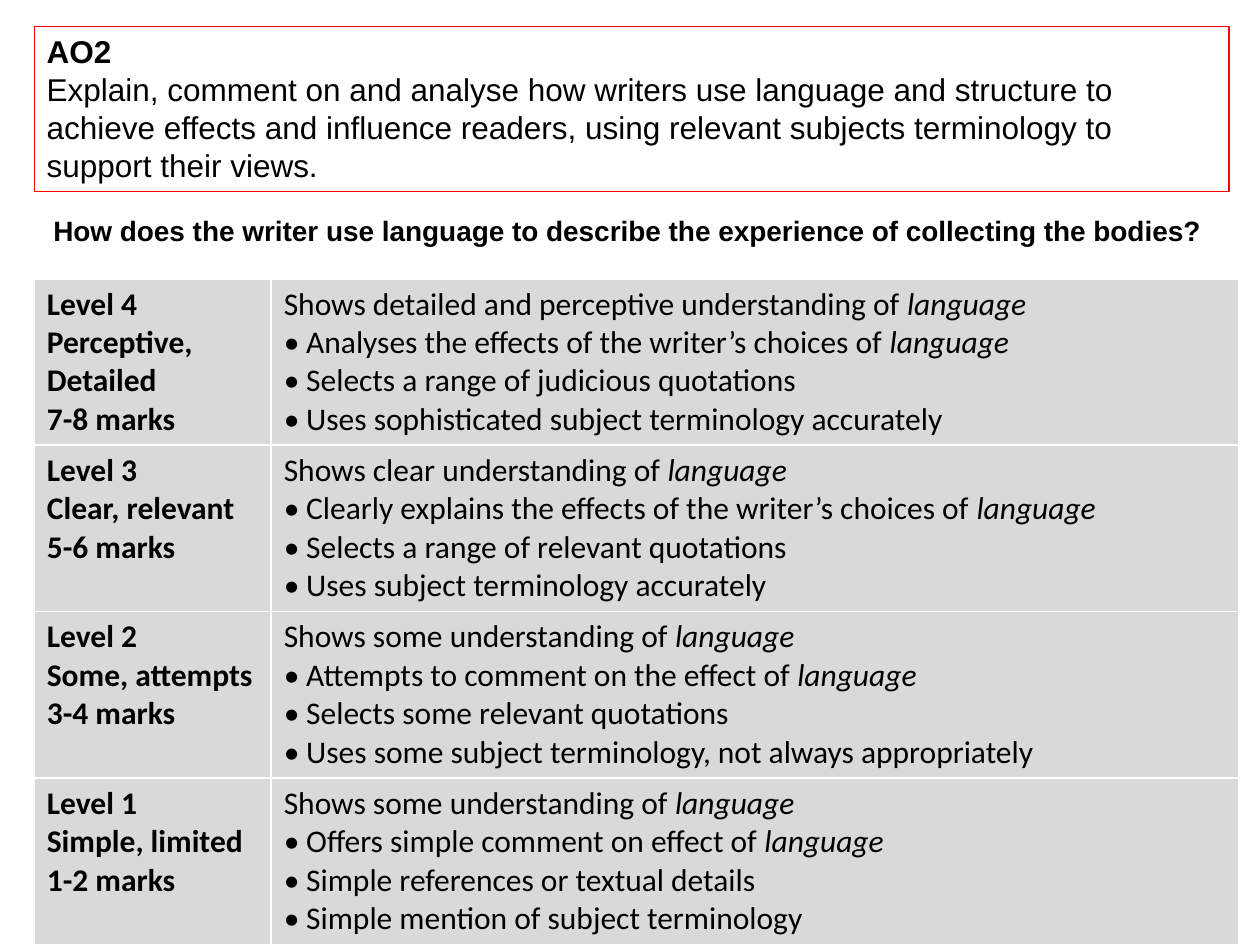
from lxml.etree import SubElement
from pptx import Presentation
from pptx.dml.color import RGBColor
from pptx.enum.shapes import MSO_SHAPE as Shape
from pptx.enum.text import MSO_ANCHOR as Anchor, MSO_AUTO_SIZE as AutoSize, PP_ALIGN as Align
from pptx.oxml.ns import qn
from pptx.util import Pt

COLORS = {"text": "000000", "outline": "FF0000", "cell": "D9D9D9", "border": "FFFFFF"}
FRAME = {"word_wrap": True, "auto_size": AutoSize.NONE, "vertical_anchor": Anchor.TOP,
         "margin_left": Pt(7.2), "margin_right": Pt(7.2),
         "margin_top": Pt(3.6), "margin_bottom": Pt(3.6)}
OBJECTIVE_FONT = {"name": "Arial", "size": Pt(18)}
QUESTION_FONT = {"name": "Arial", "size": Pt(16), "bold": True}
TABLE_FONT = {"name": "Calibri", "size": Pt(18), "bold": False}
BULLET_INDENT = Pt(12.8)
KEYWORD = "language"

OBJECTIVE = ("Explain, comment on and analyse how writers use language and structure to "
             "achieve effects and influence readers, using relevant subjects terminology "
             "to support their views.")
QUESTION = "How does the writer use language to describe the experience of collecting the bodies?"
LEVELS = [
    (["Level 4", "Perceptive, Detailed", "7-8 marks"],
     ["Shows detailed and perceptive understanding of language",
      "Analyses the effects of the writer’s choices of language",
      "Selects a range of judicious quotations",
      "Uses sophisticated subject terminology accurately"]),
    (["Level 3", "Clear, relevant", "5-6 marks"],
     ["Shows clear understanding of language",
      "Clearly explains the effects of the writer’s choices of language",
      "Selects a range of relevant quotations",
      "Uses subject terminology accurately"]),
    (["Level 2", "Some, attempts", "3-4 marks"],
     ["Shows some understanding of language",
      "Attempts to comment on the effect of language",
      "Selects some relevant quotations",
      "Uses some subject terminology, not always appropriately"]),
    (["Level 1", "Simple, limited", "1-2 marks"],
     ["Shows some understanding of language",
      "Offers simple comment on effect of language",
      "Simple references or textual details",
      "Simple mention of subject terminology"]),
]


def color(name):
    """Return the named colour."""
    return RGBColor.from_string(COLORS[name])


def apply_format(target, values):
    """Set each attribute in values on the target."""
    for name, value in values.items():
        setattr(target, name, value)


def add_run(paragraph, text, font, **extra):
    """Append a formatted run to the paragraph."""
    run = paragraph.add_run()
    run.text = text
    apply_format(run.font, {**font, **extra})
    run.font.color.rgb = color("text")


def next_paragraph(text_frame, index):
    """Return the first paragraph for index 0, otherwise a new one."""
    return text_frame.add_paragraph() if index else text_frame.paragraphs[0]


def add_bullet(paragraph):
    """Give the paragraph a hanging round bullet."""
    properties = paragraph._p.get_or_add_pPr()
    properties.set("marL", str(BULLET_INDENT))
    properties.set("indent", str(-BULLET_INDENT))
    SubElement(properties, qn("a:buFont"), typeface="Calibri")
    SubElement(properties, qn("a:buChar"), char="•")


def add_borders(cell):
    """Draw a thin line on all four sides of the cell."""
    properties = cell._tc.get_or_add_tcPr()
    for side in ("lnL", "lnR", "lnT", "lnB"):
        line = SubElement(properties, qn(f"a:{side}"), w=str(Pt(1)))
        fill = SubElement(line, qn("a:solidFill"))
        SubElement(fill, qn("a:srgbClr"), val=COLORS["border"])


def add_objective(slide, box):
    """Place the outlined assessment objective."""
    shape = slide.shapes.add_shape(Shape.RECTANGLE, *box)
    shape.shadow.inherit = False
    shape.fill.background()
    shape.line.color.rgb = color("outline")
    shape.line.width = Pt(0.75)
    apply_format(shape.text_frame, FRAME)
    for index, (text, bold) in enumerate([("AO2", True), (OBJECTIVE, False)]):
        paragraph = next_paragraph(shape.text_frame, index)
        paragraph.alignment = Align.LEFT
        add_run(paragraph, text, OBJECTIVE_FONT, bold=bold)


def add_question(slide, box):
    """Place the exam question in the title placeholder."""
    title = slide.shapes.title
    apply_format(title, dict(zip(("left", "top", "width", "height"), box)))
    apply_format(title.text_frame, FRAME)
    paragraph = title.text_frame.paragraphs[0]
    apply_format(paragraph, {"alignment": Align.CENTER, "line_spacing": 1.0})
    add_run(paragraph, QUESTION, QUESTION_FONT)


def fill_level(text_frame, lines):
    """Write the bold level name, descriptor and marks."""
    for index, line in enumerate(lines):
        add_run(next_paragraph(text_frame, index), line, TABLE_FONT, bold=True)


def fill_criteria(text_frame, lines):
    """Write a lead line and its bullets, with a closing keyword in italics."""
    for index, line in enumerate(lines):
        paragraph = next_paragraph(text_frame, index)
        if index:
            add_bullet(paragraph)
        add_run(paragraph, line.removesuffix(KEYWORD), TABLE_FONT)
        if line.endswith(KEYWORD):
            add_run(paragraph, KEYWORD, TABLE_FONT, italic=True)


def add_levels(slide, box):
    """Place the mark scheme table with equal rows."""
    left, top, width, height = box
    table = slide.shapes.add_table(len(LEVELS), 2, *box).table
    apply_format(table, {"first_row": False, "horz_banding": False})
    level_width = Pt(135.4)
    table.columns[0].width = level_width
    table.columns[1].width = width - level_width
    for row, texts in enumerate(LEVELS):
        table.rows[row].height = height // len(LEVELS)
        for column, (write, lines) in enumerate(zip((fill_level, fill_criteria), texts)):
            cell = table.cell(row, column)
            add_borders(cell)
            cell.fill.solid()
            cell.fill.fore_color.rgb = color("cell")
            write(cell.text_frame, lines)


def main():
    """Build and save the slide."""
    presentation = Presentation()
    apply_format(presentation, {"slide_width": Pt(720), "slide_height": Pt(540)})
    slide = presentation.slides.add_slide(presentation.slide_layouts[5])
    left = Pt(19.6)
    add_levels(slide, (left, Pt(159.3), Pt(688.3), Pt(374.4)))
    add_objective(slide, (left, Pt(15), Pt(682.8), Pt(94.4)))
    add_question(slide, (left, Pt(118.3), Pt(678), Pt(60)))
    presentation.save("out.pptx")


if __name__ == "__main__":
    main()
